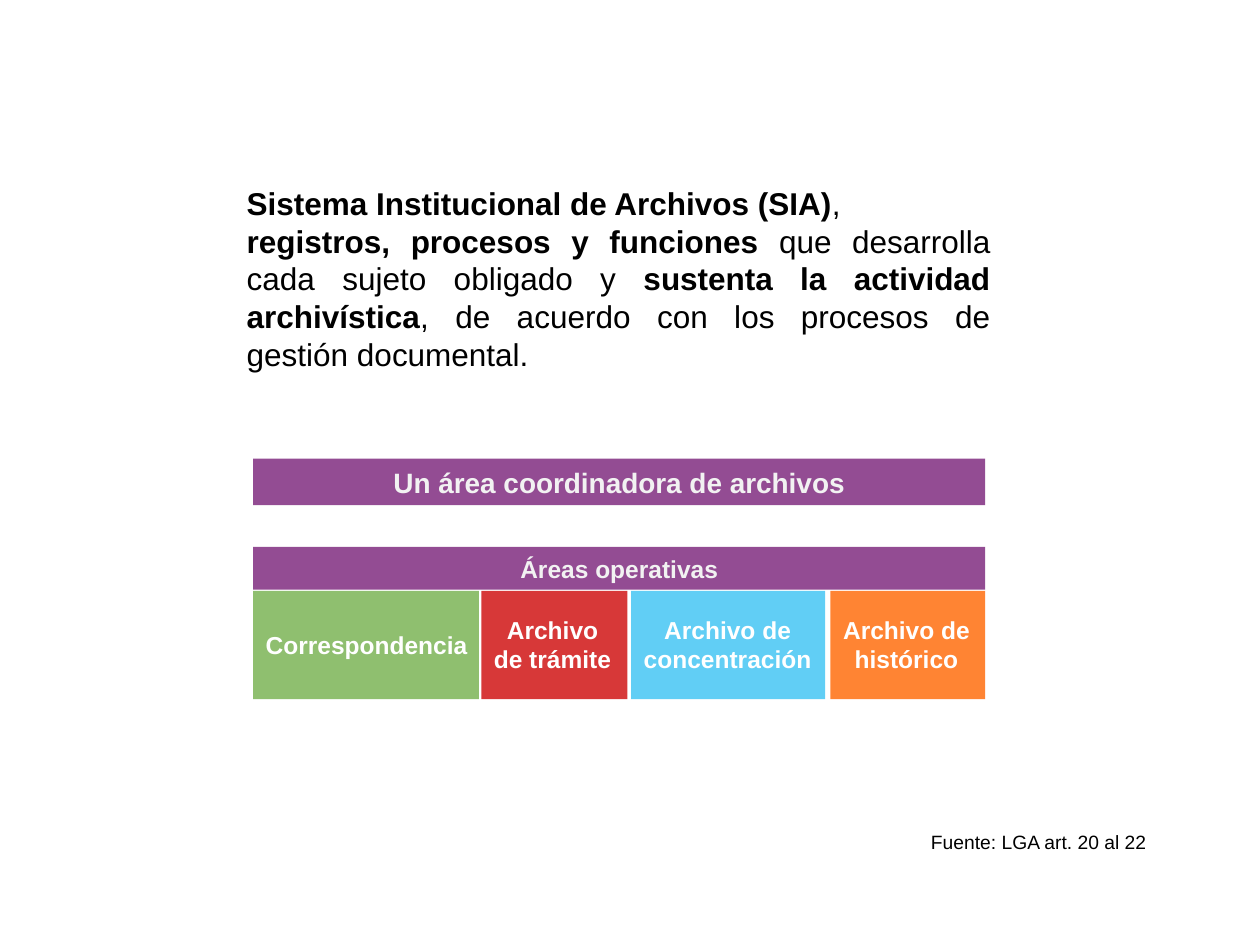
from dataclasses import dataclass

from lxml.etree import SubElement
from pptx import Presentation
from pptx.dml.color import RGBColor
from pptx.enum.shapes import MSO_SHAPE
from pptx.enum.text import MSO_ANCHOR, PP_ALIGN
from pptx.oxml.ns import qn
from pptx.slide import Slide
from pptx.util import Inches, Pt


def color(value):
    return RGBColor.from_string(value)


@dataclass
class SlideBuilder:
    slide: Slide
    font: str = "Arial"
    ink: str = "000000"
    light: str = "F2F2F2"
    white: str = "FFFFFF"
    purple: str = "660066"

    def add_runs(self, frame, paragraphs, size, ink, align):
        frame.word_wrap = True
        for index, runs in enumerate(paragraphs):
            paragraph = frame.add_paragraph() if index else frame.paragraphs[0]
            paragraph.alignment = align
            for words, bold in runs:
                run = paragraph.add_run()
                run.text = words
                run.font.name = self.font
                run.font.size = Pt(size)
                run.font.bold = bold
                run.font.color.rgb = color(ink)

    def text(self, box, paragraphs, size, ink, align):
        label = self.slide.shapes.add_textbox(*map(Inches, box))
        self.add_runs(label.text_frame, paragraphs, size, ink, align)

    def block(self, box, fill, opacity):
        block = self.slide.shapes.add_shape(MSO_SHAPE.RECTANGLE, *map(Inches, box))
        block.shadow.inherit = False
        block.line.fill.background()
        block.fill.solid()
        block.fill.fore_color.rgb = color(fill)
        tint = block.element.spPr.find(qn("a:solidFill"))[0]
        SubElement(tint, qn("a:alpha")).set("val", str(opacity * 1000))
        return block

    def banner(self, box, words, size):
        frame = self.block(box, self.purple, 70).text_frame
        frame.vertical_anchor = MSO_ANCHOR.MIDDLE
        self.add_runs(frame, [[(words, True)]], size, self.light, PP_ALIGN.CENTER)


def main():
    deck = Presentation()
    deck.slide_width, deck.slide_height = Inches(10), Inches(7.5)
    builder = SlideBuilder(deck.slides.add_slide(deck.slide_layouts[6]))

    definition = [
        [("Sistema Institucional de Archivos (SIA)", True), (", ", False)],
        [
            ("registros, procesos y funciones ", True),
            ("que desarrolla cada sujeto obligado y ", False),
            ("sustenta la actividad archivística", True),
            (", de acuerdo con los procesos de gestión documental.", False),
        ],
    ]
    builder.text((1.86, 1.41, 6.1, 1.62), definition, 18, builder.ink, PP_ALIGN.JUSTIFY)

    left, width = 2.01, 5.81
    builder.banner((left, 3.64, width, 0.37), "Un área coordinadora de archivos", 16)
    builder.banner((left, 4.34, width, 0.34), "Áreas operativas", 14)

    areas = [
        ("Correspondencia", 2.01, 1.79, "70AD47", 78, (2.01, 4.95, 1.84, 0.34), PP_ALIGN.LEFT),
        ("Archivo de trámite", 3.82, 1.16, "CC0000", 78, (3.79, 4.83, 1.19, 0.57), PP_ALIGN.CENTER),
        ("Archivo de concentración", 5.01, 1.54, "00B0F0", 62, (4.98, 4.83, 1.59, 0.57), PP_ALIGN.CENTER),
        ("Archivo de histórico", 6.59, 1.23, "FF6600", 80, (6.56, 4.83, 1.27, 0.57), PP_ALIGN.CENTER),
    ]
    for name, area_left, area_width, fill, opacity, label_box, align in areas:
        builder.block((area_left, 4.69, area_width, 0.86), fill, opacity)
        builder.text(label_box, [[(name, True)]], 14, builder.white, align)

    source = [[("Fuente: LGA art. 20 al 22", False)]]
    builder.text((6.77, 6.54, 2.43, 0.29), source, 11, builder.ink, PP_ALIGN.RIGHT)

    deck.save("out.pptx")


if __name__ == "__main__":
    main()
